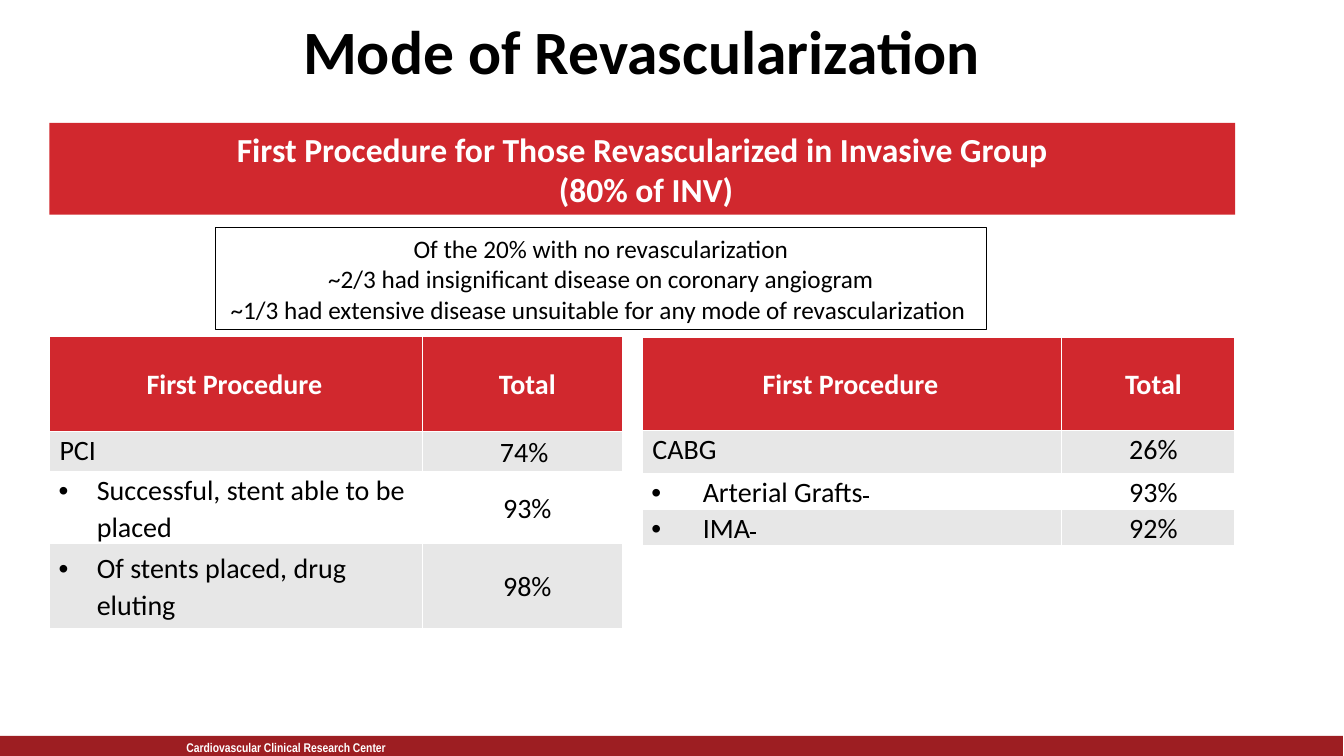
"""Build the Mode of Revascularization slide."""
from lxml.etree import SubElement
from pptx import Presentation
from pptx.dml.color import RGBColor
from pptx.enum.shapes import MSO_SHAPE as SHAPE
from pptx.enum.text import MSO_ANCHOR as ANCHOR, PP_ALIGN as ALIGN
from pptx.oxml.ns import qn
from pptx.util import Inches, Pt

BLACK = RGBColor(0x00, 0x00, 0x00)
WHITE = RGBColor(0xFF, 0xFF, 0xFF)
RED = RGBColor(0xD1, 0x28, 0x2E)
DARK_RED = RGBColor(0x9D, 0x1E, 0x22)
GRAY = RGBColor(0xE7, 0xE7, 0xE7)


def add_run(p, text, size, color, bold=False, font="Calibri"):
    r = p.add_run()
    r.text = text
    r.font.name, r.font.size, r.font.bold = font, Pt(size), bold
    r.font.color.rgb = color
    return r


def add_box(left, top, width, height, fill=None, line=None):
    sp = s.shapes.add_shape(SHAPE.RECTANGLE, Inches(left), Inches(top), Inches(width), Inches(height))
    sp.shadow.inherit = False
    if fill is None:
        sp.fill.background()
    else:
        sp.fill.solid()
        sp.fill.fore_color.rgb = fill
    if line is None:
        sp.line.fill.background()
    else:
        sp.line.color.rgb = line
        sp.line.width = Pt(0.75)
    return sp


prs = Presentation()
prs.slide_width, prs.slide_height = Inches(13.33), Inches(7.5)
s = prs.slides.add_slide(prs.slide_layouts[6])

add_box(-0.01, 7.3, 13.33, 0.23, fill=DARK_RED)
footer = s.shapes.add_textbox(Inches(1.75), Inches(7.29), Inches(2.39), Inches(0.15))
footer.text_frame.word_wrap = True
add_run(footer.text_frame.paragraphs[0], "Cardiovascular Clinical Research Center", 9, WHITE, True, "Arial Narrow")

title = s.shapes.add_textbox(Inches(0.16), Inches(0.21), Inches(12.41), Inches(1.05))
tf = title.text_frame
tf.word_wrap = True
tf.margin_left = tf.margin_right = tf.margin_top = tf.margin_bottom = 0
p = tf.paragraphs[0]
p.alignment, p.line_spacing = ALIGN.CENTER, 0.9
add_run(p, "Mode of Revascularization", 44, BLACK, True)

banner = add_box(0.49, 1.22, 11.76, 0.91, fill=RED)
note = add_box(2.14, 2.26, 7.64, 1.01, line=BLACK)
note.text_frame.word_wrap = False
box_texts = [
    (banner, 24, WHITE, True, [
        "First Procedure for Those Revascularized in Invasive Group",
        " (80% of INV)"]),
    (note, 18, BLACK, False, [
        "Of the 20% with no revascularization",
        "~2/3 had insignificant disease on coronary angiogram",
        "~1/3 had extensive disease unsuitable for any mode of revascularization "]),
]
for sp, size, color, bold, lines in box_texts:
    tf = sp.text_frame
    tf.vertical_anchor = ANCHOR.MIDDLE
    for i, line in enumerate(lines):
        p = tf.add_paragraph() if i else tf.paragraphs[0]
        p.alignment = ALIGN.CENTER
        add_run(p, line, size, color, bold)

MID, TOP = ANCHOR.MIDDLE, ANCHOR.TOP
HEADER = ("First Procedure", "Total", MID, MID)
procedure_tables = [
    (0.49, 3.34, [3.7, 1.98], [0.94, 0.4, 0.69, 0.84], 0.47, False, [
        HEADER,
        ("PCI", "74% ", TOP, MID),
        ("Successful, stent able to be placed", "93%", TOP, MID),
        ("Of stents placed, drug eluting", "98%", MID, MID)]),
    (6.37, 3.35, [4.16, 1.72], [0.92, 0.43, 0.35, 0.35], 0.6, True, [
        HEADER,
        ("CABG", "26%", TOP, TOP),
        ("Arterial Grafts", "93%", TOP, TOP),
        ("IMA", "92%", TOP, TOP)]),
]
for left, top, widths, heights, bullet_indent, struck_end, rows in procedure_tables:
    table = s.shapes.add_table(len(rows), len(widths), Inches(left), Inches(top),
                               Inches(sum(widths)), Inches(sum(heights))).table
    for col, width in zip(table.columns, widths):
        col.width = Inches(width)
    for i, (label, value, label_anchor, value_anchor) in enumerate(rows):
        table.rows[i].height = Inches(heights[i])
        for j, (text, anchor) in enumerate([(label, label_anchor), (value, value_anchor)]):
            cell = table.cell(i, j)
            cell.fill.solid()
            cell.fill.fore_color.rgb = RED if i == 0 else GRAY if i % 2 else WHITE
            cell.margin_left = cell.margin_right = cell.margin_top = cell.margin_bottom = 0
            cell.vertical_anchor = anchor
            p = cell.text_frame.paragraphs[0]
            p.line_spacing = 1.07
            p.alignment = ALIGN.CENTER if i == 0 or j == 1 else ALIGN.LEFT
            pPr = p._p.get_or_add_pPr()
            bulleted = i > 1 and j == 0
            pPr.set("marL", str(Inches(bullet_indent if bulleted else 0.1)))
            pPr.set("indent", str(Inches(0.09 - bullet_indent) if bulleted else 0))
            if i == 0 and j == 0:
                cell.margin_right = Inches(0.13)
            if bulleted:
                SubElement(pPr, qn("a:buFont")).set("typeface", "Arial")
                SubElement(pPr, qn("a:buChar")).set("char", "•")
            add_run(p, text, 20, BLACK if i else WHITE, i == 0)
            if bulleted and struck_end:
                r = add_run(p, " ", 20, BLACK)
                r._r.get_or_add_rPr().set("strike", "sngStrike")

prs.save("out.pptx")
